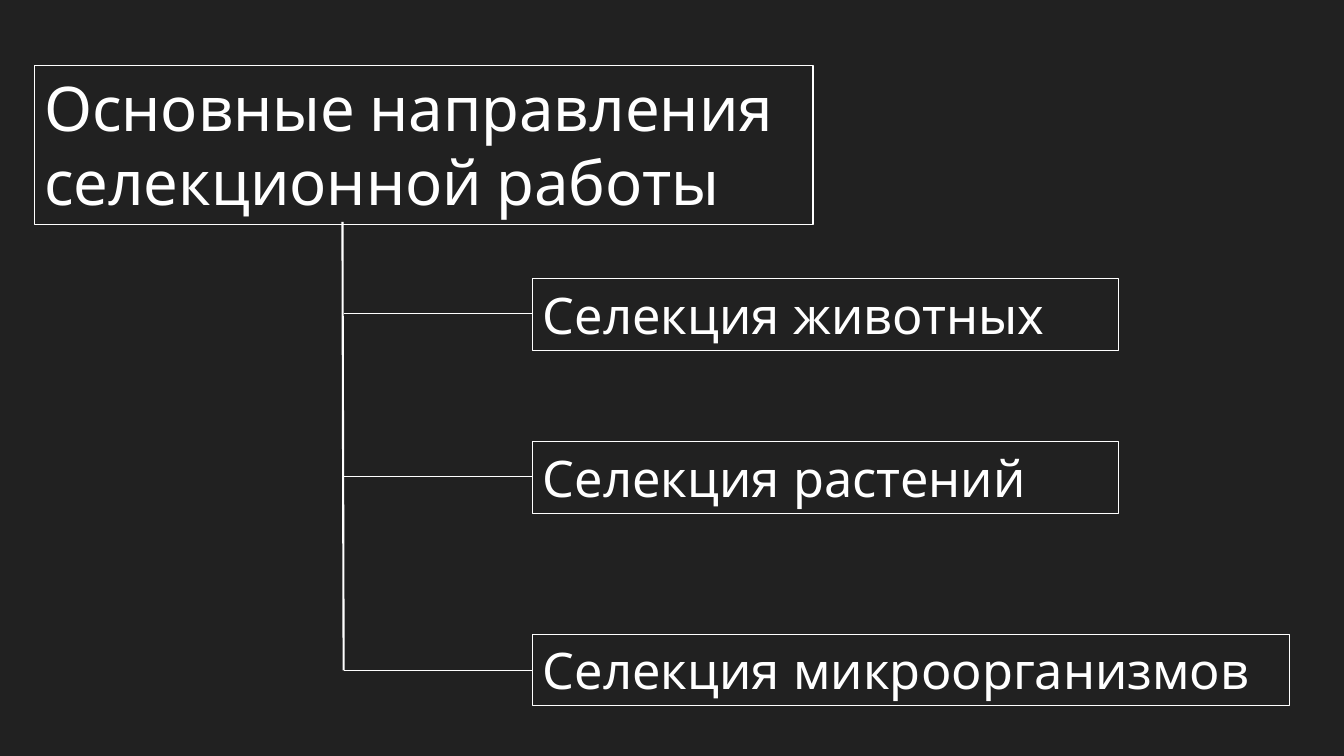
from pptx import Presentation
from pptx import util as u
from pptx.dml.color import RGBColor
from pptx.enum import shapes, text
from pptx.oxml.ns import qn
from lxml import etree

Cm = u.Cm
INK = {"back": "212121", "white": "FFFFFF"}
WHITE = RGBColor.from_string(INK["white"])

deck = Presentation()
deck.slide_width, deck.slide_height = Cm(33.87), Cm(19.05)
slide = deck.slides.add_slide(deck.slide_layouts[6])
fill = slide.background.fill
fill.solid()
fill.fore_color.rgb = RGBColor.from_string(INK["back"])


def add_box(label, left, top, width, height, font):
    """Add an outlined text box, with font values taken from a dict."""
    box = slide.shapes.add_textbox(Cm(left), Cm(top), Cm(width), Cm(height))
    box.line.color.rgb = WHITE
    box.line.width = u.Pt(0.75)
    frame = box.text_frame
    frame.word_wrap = True
    frame.auto_size = text.MSO_AUTO_SIZE.SHAPE_TO_FIT_TEXT
    run = frame.paragraphs[0].add_run()
    run.text = label
    for name, value in font.items():
        setattr(run.font, name, value)
    run.font.color.rgb = WHITE


def add_line(x1, y1, x2, y2, width):
    line = slide.shapes.add_connector(
        shapes.MSO_CONNECTOR.STRAIGHT, Cm(x1), Cm(y1), Cm(x2), Cm(y2))
    line.line.color.rgb = WHITE
    line.line.width = u.Pt(width)
    etree.SubElement(line._element.spPr, qn("a:effectLst"))


HEAD = {"name": "Cabin", "size": u.Pt(44)}
ITEM = {"name": "Quicksand", "size": u.Pt(36)}
TRUNK, LEFT = 8.66, 13.43

add_box("Основные направления селекционной работы", 0.86, 1.65, 19.63, 4.01, HEAD)
add_line(TRUNK - 0.03, 5.59, TRUNK, 16.89, 1.5)

# label, box top, box width, branch height
branches = [
    ("Селекция животных", 7.03, 14.76, 7.9),
    ("Селекция растений", 11.13, 14.76, 12.01),
    ("Селекция микроорганизмов", 15.99, 19.08, 16.89),
]
for label, top, width, level in branches:
    add_line(TRUNK, level, LEFT, level, 0.75)
    add_box(label, LEFT, top, width, 1.8, ITEM)

deck.save("out.pptx")
